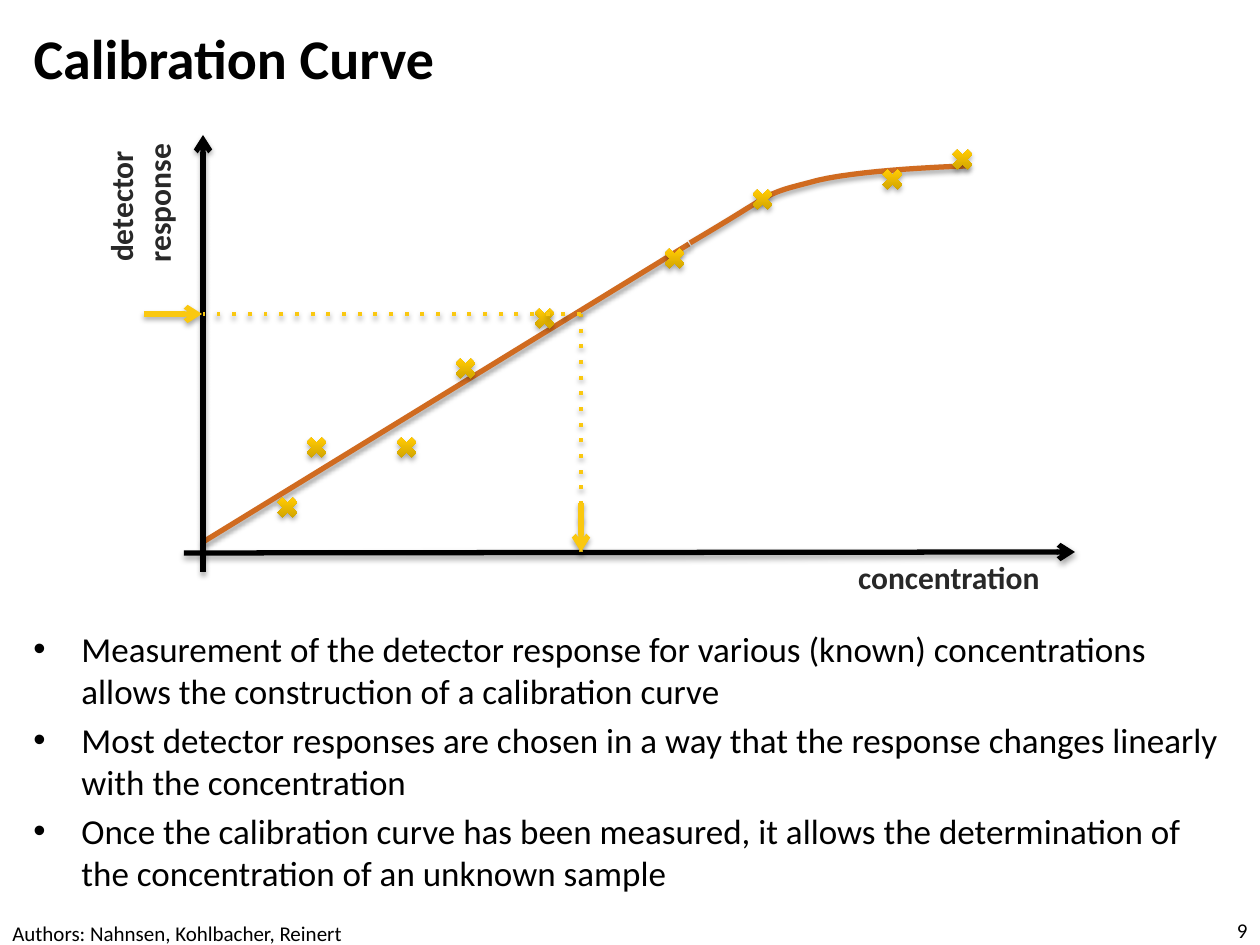
from dataclasses import dataclass

from lxml import etree
from pptx import Presentation
from pptx.dml.color import RGBColor
from pptx.enum.shapes import MSO_CONNECTOR, MSO_SHAPE
from pptx.enum.text import MSO_ANCHOR, PP_ALIGN
from pptx.oxml.ns import qn
from pptx.util import Emu, Pt

STRAIGHT = MSO_CONNECTOR.STRAIGHT
CROSS = MSO_SHAPE.MATH_MULTIPLY
TOP, MIDDLE = MSO_ANCHOR.TOP, MSO_ANCHOR.MIDDLE
LEFT, RIGHT = PP_ALIGN.LEFT, PP_ALIGN.RIGHT

FONT = "Calibri"
BLACK = RGBColor(0x00, 0x00, 0x00)
CHARCOAL = RGBColor(0x28, 0x28, 0x28)
ORANGE = RGBColor(0xD0, 0x6B, 0x20)
YELLOW = RGBColor(0xFA, 0xC8, 0x10)
GOLD_DARK = RGBColor(0xC6, 0x9C, 0x00)
GOLD_LIGHT = RGBColor(0xFF, 0xC9, 0x03)

PIXELS_PER_INCH = 126
SLIDE_SIZE = (1260, 945)
MARKER_SIZE = 29
CURVE_STEPS = 16
INDENT = 48

Point = tuple[int, int]


@dataclass(frozen=True)
class Label:
    lines: tuple[str, ...]
    left: int
    top: int
    width: int
    height: int
    size: int
    color: RGBColor = BLACK
    bold: bool = False
    align: PP_ALIGN = LEFT
    anchor: MSO_ANCHOR = TOP
    wrap: bool = True
    rotation: int = 0
    bullets: bool = False


@dataclass(frozen=True)
class Stroke:
    start: Point
    end: Point
    color: RGBColor
    width: float = 3
    arrow: bool = False
    dotted: bool = False


TITLE = Label(("Calibration Curve",), 21, 10, 924, 95, 32, bold=True, anchor=MIDDLE)
LABELS = (
    Label(("9",), 945, 916, 315, 29, 12, align=RIGHT, anchor=MIDDLE),
    Label(("Authors: Nahnsen, Kohlbacher, Reinert",), 0, 914, 630, 29, 12),
    Label(
        (
            "Measurement of the detector response for various (known) concentrations "
            "allows the construction of a calibration curve",
            "Most detector responses are chosen in a way that the response changes "
            "linearly with the concentration",
            "Once the calibration curve has been measured, it allows the determination "
            "of the concentration of an unknown sample",
        ),
        21, 621, 1217, 261, 20, bullets=True,
    ),
    Label(("detector ", "response"), 67, 160, 146, 89, 18, CHARCOAL, True, RIGHT,
          wrap=False, rotation=270),
    Label(("concentration",), 842, 552, 210, 50, 18, CHARCOAL, True, RIGHT, wrap=False),
)

ORIGIN_X, AXIS_Y = 203, 552
SAMPLE_X, SAMPLE_Y = 581, 314
LINEAR_RANGE = Stroke((ORIGIN_X, 542), (689, 244), ORANGE)
AXES = (
    Stroke((ORIGIN_X, 572), (ORIGIN_X, 135), BLACK, arrow=True),
    Stroke((184, 553), (1075, AXIS_Y), BLACK, arrow=True),
)
READINGS = (
    Stroke((SAMPLE_X, AXIS_Y), (SAMPLE_X, SAMPLE_Y), YELLOW, 2.25, dotted=True),
    Stroke((SAMPLE_X, SAMPLE_Y), (ORIGIN_X, SAMPLE_Y), YELLOW, 2.25, dotted=True),
    Stroke((144, SAMPLE_Y), (202, SAMPLE_Y), YELLOW, arrow=True),
    Stroke((SAMPLE_X, 503), (SAMPLE_X, AXIS_Y), YELLOW, arrow=True),
)
SATURATION = (
    ((690, 243), (777, 192), (761, 195), (808, 183)),
    ((808, 183), (853, 169), (969, 166), (969, 166)),
)
MARKERS = (
    (273, 493), (302, 433), (392, 433), (451, 354), (530, 304),
    (660, 244), (748, 185), (878, 165), (948, 145),
)


def px(length: float) -> Emu:
    return Emu(round(length * 914400 / PIXELS_PER_INCH))


def add_shadow(shape) -> None:
    effects = etree.SubElement(shape._element.spPr, qn("a:effectLst"))
    shadow = etree.SubElement(
        effects, qn("a:outerShdw"), blurRad=str(Pt(3.1)), dist=str(Pt(1.8)),
        dir="5400000", rotWithShape="0",
    )
    color = etree.SubElement(shadow, qn("a:srgbClr"), val=str(BLACK))
    etree.SubElement(color, qn("a:alpha"), val="35000")


def write_label(shape, label: Label) -> None:
    shape.left, shape.top = px(label.left), px(label.top)
    shape.width, shape.height = px(label.width), px(label.height)
    shape.rotation = label.rotation
    frame = shape.text_frame
    frame.word_wrap = label.wrap
    frame.vertical_anchor = label.anchor
    for index, line in enumerate(label.lines):
        para = frame.paragraphs[0] if index == 0 else frame.add_paragraph()
        para.alignment = label.align
        if label.bullets:
            para.space_before = Pt(label.size * 0.2)
            properties = para._p.get_or_add_pPr()
            properties.set("marL", str(px(INDENT)))
            properties.set("indent", str(-px(INDENT)))
            etree.SubElement(properties, qn("a:buFont"), typeface="Arial")
            etree.SubElement(properties, qn("a:buChar"), char="•")
        span = para.add_run()
        span.text = line
        span.font.name = FONT
        span.font.size = Pt(label.size)
        span.font.bold = label.bold
        span.font.color.rgb = label.color


def add_stroke(page, stroke: Stroke) -> None:
    connector = page.shapes.add_connector(
        STRAIGHT, *(px(value) for value in stroke.start + stroke.end)
    )
    connector.line.color.rgb = stroke.color
    connector.line.width = Pt(stroke.width)
    outline = connector._element.spPr.find(qn("a:ln"))
    if stroke.dotted:
        etree.SubElement(outline, qn("a:prstDash"), val="dot")
    if stroke.arrow:
        etree.SubElement(outline, qn("a:tailEnd"), type="arrow")
    add_shadow(connector)


def bezier_point(controls: tuple[Point, ...], t: float) -> tuple[Emu, Emu]:
    s = 1 - t
    weights = (s**3, 3 * s * s * t, 3 * s * t * t, t**3)
    x, y = (sum(w * c for w, c in zip(weights, axis)) for axis in zip(*controls))
    return px(x), px(y)


def add_saturation_curve(page) -> None:
    points = [
        bezier_point(controls, step / CURVE_STEPS)
        for controls in SATURATION
        for step in range(1, CURVE_STEPS + 1)
    ]
    builder = page.shapes.build_freeform(*bezier_point(SATURATION[0], 0))
    builder.add_line_segments(points, close=False)
    curve = builder.convert_to_shape()
    curve.fill.background()
    curve.line.color.rgb = ORANGE
    curve.line.width = Pt(3)
    add_shadow(curve)


def add_marker(page, left: int, top: int) -> None:
    marker = page.shapes.add_shape(
        CROSS, px(left), px(top), px(MARKER_SIZE), px(MARKER_SIZE)
    )
    marker.fill.gradient()
    marker.fill.gradient_angle = 90
    stops = ((0, GOLD_DARK), (0.8, GOLD_LIGHT))
    for stop, (position, color) in zip(marker.fill.gradient_stops, stops):
        stop.position = position
        stop.color.rgb = color
    marker.line.fill.background()
    add_shadow(marker)


def main() -> None:
    deck = Presentation()
    deck.slide_width, deck.slide_height = (px(side) for side in SLIDE_SIZE)
    page = deck.slides.add_slide(deck.slide_layouts.get_by_name("Title Only"))
    write_label(page.shapes.title, TITLE)
    for label in LABELS:
        write_label(page.shapes.add_textbox(0, 0, 0, 0), label)
    add_stroke(page, LINEAR_RANGE)
    add_saturation_curve(page)
    for axis in AXES:
        add_stroke(page, axis)
    for left, top in MARKERS:
        add_marker(page, left, top)
    for reading in READINGS:
        add_stroke(page, reading)
    deck.save("out.pptx")


if __name__ == "__main__":
    main()
